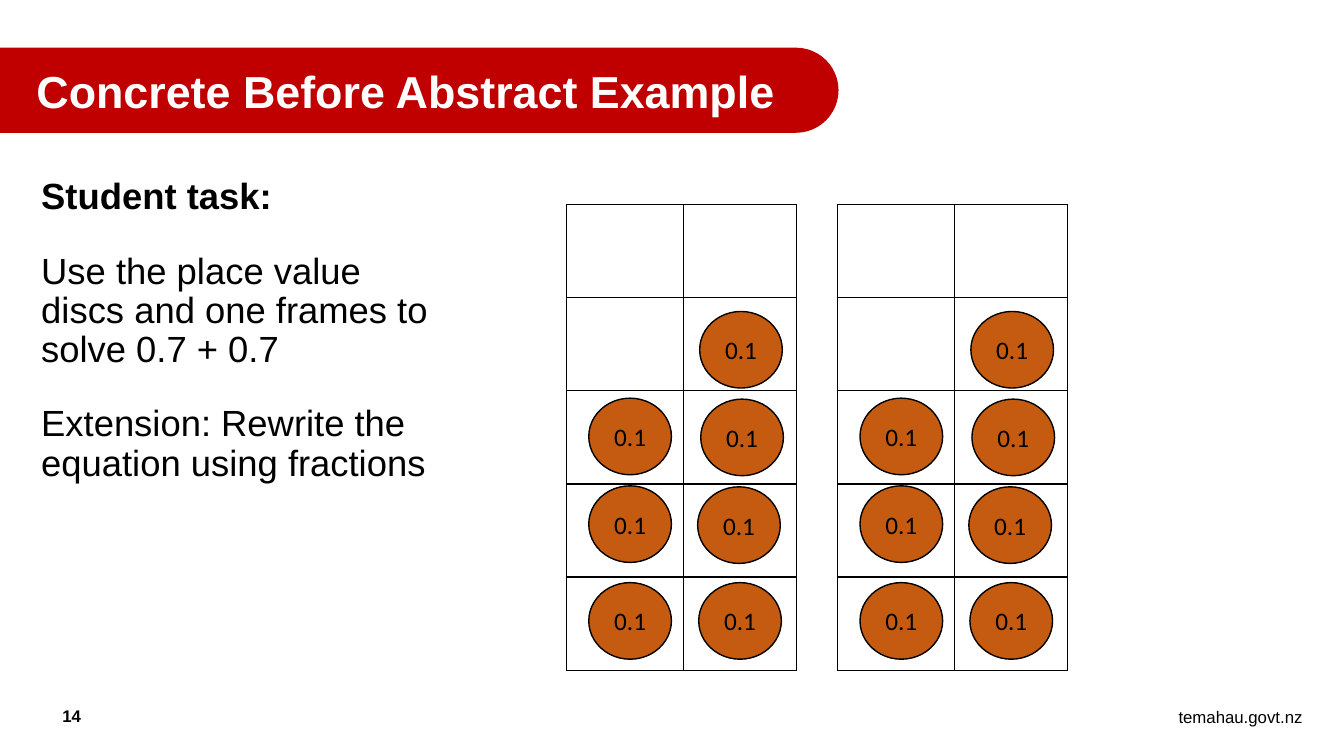
"""Build the place value discs slide, with lengths as percent shares of the slide."""
import dataclasses
import typing

import lxml.etree
import pptx
import pptx.dml.color
import pptx.enum.shapes
import pptx.enum.text
import pptx.oxml.ns
import pptx.util

Align = pptx.enum.text.PP_ALIGN
Anchor = pptx.enum.text.MSO_ANCHOR
Preset = pptx.enum.shapes.MSO_SHAPE
WIDE = pptx.util.Inches(13.33)
HIGH = pptx.util.Inches(7.5)


@dataclasses.dataclass(frozen=True)
class Theme:
    black: str = "000000"
    white: str = "FFFFFF"
    red: str = "C00000"
    copper: str = "C55A11"
    sans: str = "Arial"
    disc_font: str = "Calibri"
    title: int = 32
    body: int = 26
    disc: int = 18
    foot: int = 12
    line: int = 1


class Box(typing.NamedTuple):
    left: float
    top: float
    width: float
    height: float

    def place(self) -> tuple[int, int, int, int]:
        return across(self.left), down(self.top), across(self.width), down(self.height)


class Disc(typing.NamedTuple):
    col: int
    row: int
    inset: float
    drop: float


THEME = Theme()
FRAMES = (42.16, 62.34)
FRAME_TOP = 27.07
COLS = (8.7, 8.4)
ROWS = 5
ROW = 12.32
DISCS = (
    Disc(1, 1, 1.2, 1.81),
    Disc(1, 2, 1.28, 1.09),
    Disc(1, 3, 1.05, 0.37),
    Disc(1, 4, 1.13, 0.72),
    Disc(0, 4, 1.65, 0.72),
    Disc(0, 3, 1.65, 0.24),
    Disc(0, 2, 1.65, 0.96),
)
TASK = (
    "Student task:",
    "Use the place value discs and one frames to solve 0.7 + 0.7",
    "Extension: Rewrite the equation using fractions",
)


def across(share: float) -> int:
    return round(WIDE * share / 100)


def down(share: float) -> int:
    return round(HIGH * share / 100)


def paint(code: str) -> pptx.dml.color.RGBColor:
    return pptx.dml.color.RGBColor.from_string(code)


def style(part, size: int, color: str, face: str = THEME.sans, bold: bool = False) -> None:
    for run in part.runs:
        run.font.size = pptx.util.Pt(size)
        run.font.name = face
        run.font.bold = bold
        run.font.color.rgb = paint(color)


def add_text(slide, box: Box, lines: tuple[str, ...], size: int, bold: bool = False,
             align=Align.LEFT, anchor=Anchor.TOP):
    frame = slide.shapes.add_textbox(*box.place()).text_frame
    frame.word_wrap = True
    frame.vertical_anchor = anchor
    frame.text = "\n".join(lines)
    for part in frame.paragraphs:
        part.alignment = align
        style(part, size, THEME.black, bold=bold)
    return frame


def add_form(slide, kind, box: Box, text: str, fill: str, edge: str):
    form = slide.shapes.add_shape(kind, *box.place())
    form.shadow.inherit = False
    form.fill.solid()
    form.fill.fore_color.rgb = paint(fill)
    form.line.color.rgb = paint(edge)
    form.line.width = pptx.util.Pt(THEME.line)
    form.text_frame.text = text
    form.text_frame.vertical_anchor = Anchor.MIDDLE
    return form


def add_edges(cell) -> None:
    props = cell._tc.get_or_add_tcPr()
    name = pptx.oxml.ns.qn
    for spot, side in enumerate(("a:lnL", "a:lnR", "a:lnT", "a:lnB")):
        edge = lxml.etree.Element(name(side), w=str(pptx.util.Pt(THEME.line)))
        fill = lxml.etree.SubElement(edge, name("a:solidFill"))
        lxml.etree.SubElement(fill, name("a:srgbClr"), val=THEME.black)
        props.insert(spot, edge)


def add_frame(slide, left: float) -> None:
    box = Box(left, FRAME_TOP, sum(COLS), ROWS * ROW)
    table = slide.shapes.add_table(ROWS, len(COLS), *box.place()).table
    table.first_row = False
    table.horz_banding = False
    for col, width in zip(table.columns, COLS):
        col.width = across(width)
    for row in table.rows:
        row.height = down(ROW)
    for cell in table.iter_cells():
        cell.fill.solid()
        cell.fill.fore_color.rgb = paint(THEME.white)
        add_edges(cell)


def add_disc(slide, left: float, disc: Disc) -> None:
    box = Box(left + sum(COLS[:disc.col]) + disc.inset,
              FRAME_TOP + disc.row * ROW + disc.drop, 6.15, 10.13)
    form = add_form(slide, Preset.OVAL, box, "0.1", THEME.copper, THEME.black)
    part = form.text_frame.paragraphs[0]
    part.alignment = Align.CENTER
    style(part, THEME.disc, THEME.black, THEME.disc_font)


def add_title(slide) -> None:
    box = Box(-3.38, 6.4, 65.72, 11.07)
    form = add_form(slide, Preset.ROUNDED_RECTANGLE, box,
                    "Concrete Before Abstract Example", THEME.red, THEME.red)
    form.adjustments[0] = 0.5
    form.text_frame.margin_left = across(5.18)
    part = form.text_frame.paragraphs[0]
    part.alignment = Align.LEFT
    style(part, THEME.title, THEME.white, bold=True)


def add_task(slide) -> None:
    frame = add_text(slide, Box(2.33, 22.93, 31.13, 71.87), TASK, THEME.body)
    for part in frame.paragraphs:
        part.line_spacing = 0.9
        part.space_after = pptx.util.Pt(25)
    frame.paragraphs[0].runs[0].font.bold = True


def main() -> None:
    deck = pptx.Presentation()
    deck.slide_width, deck.slide_height = WIDE, HIGH
    slide = deck.slides.add_slide(deck.slide_layouts[6])
    add_text(slide, Box(74.94, 92.8, 22.73, 4), ("temahau.govt.nz",), THEME.foot,
             align=Align.RIGHT)
    add_text(slide, Box(3.9, 93.33, 8.63, 2.67), ("14",), THEME.foot, bold=True,
             anchor=Anchor.MIDDLE)
    for left in FRAMES:
        add_frame(slide, left)
        for disc in DISCS:
            add_disc(slide, left, disc)
    add_title(slide)
    add_task(slide)
    deck.save("out.pptx")


if __name__ == "__main__":
    main()
